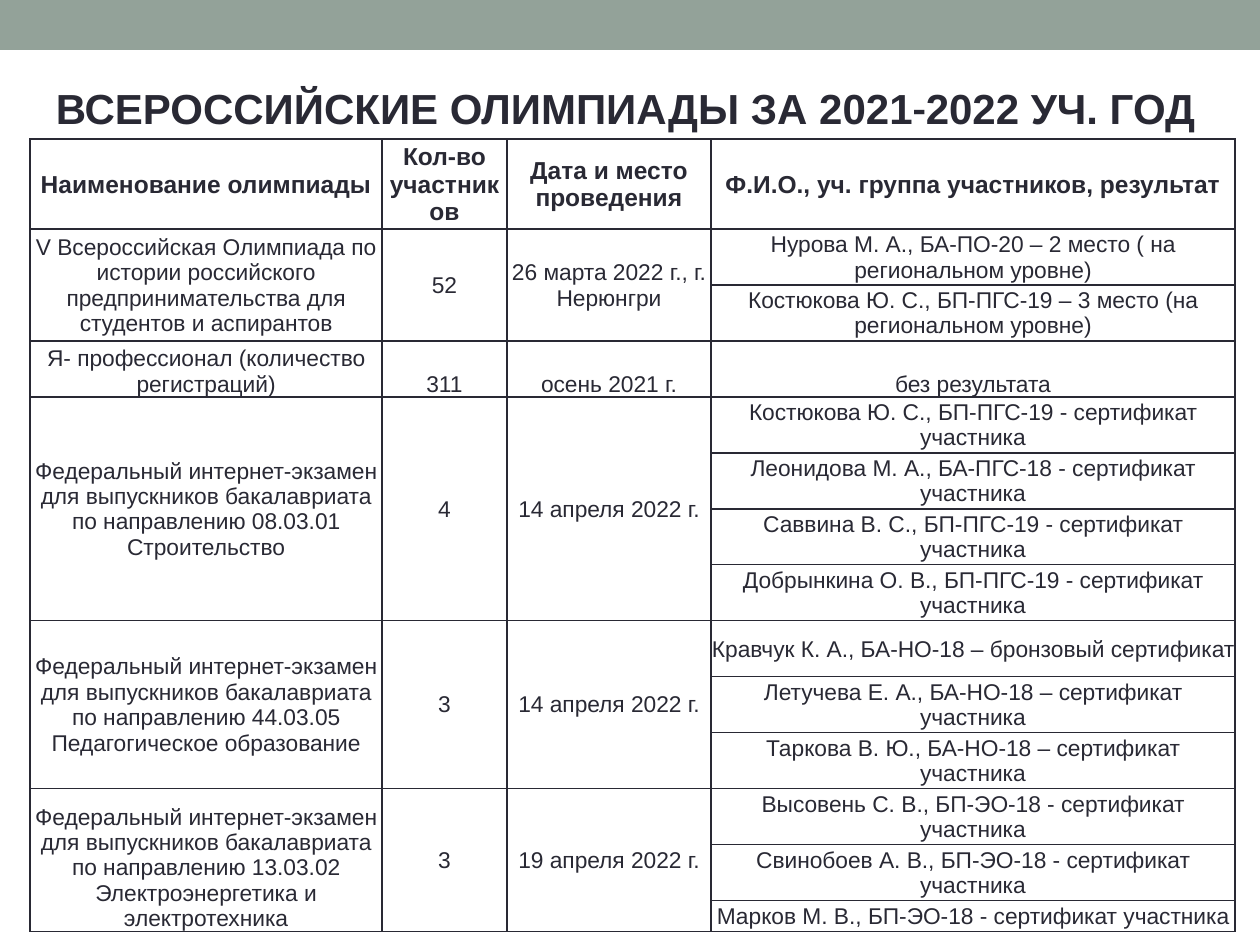
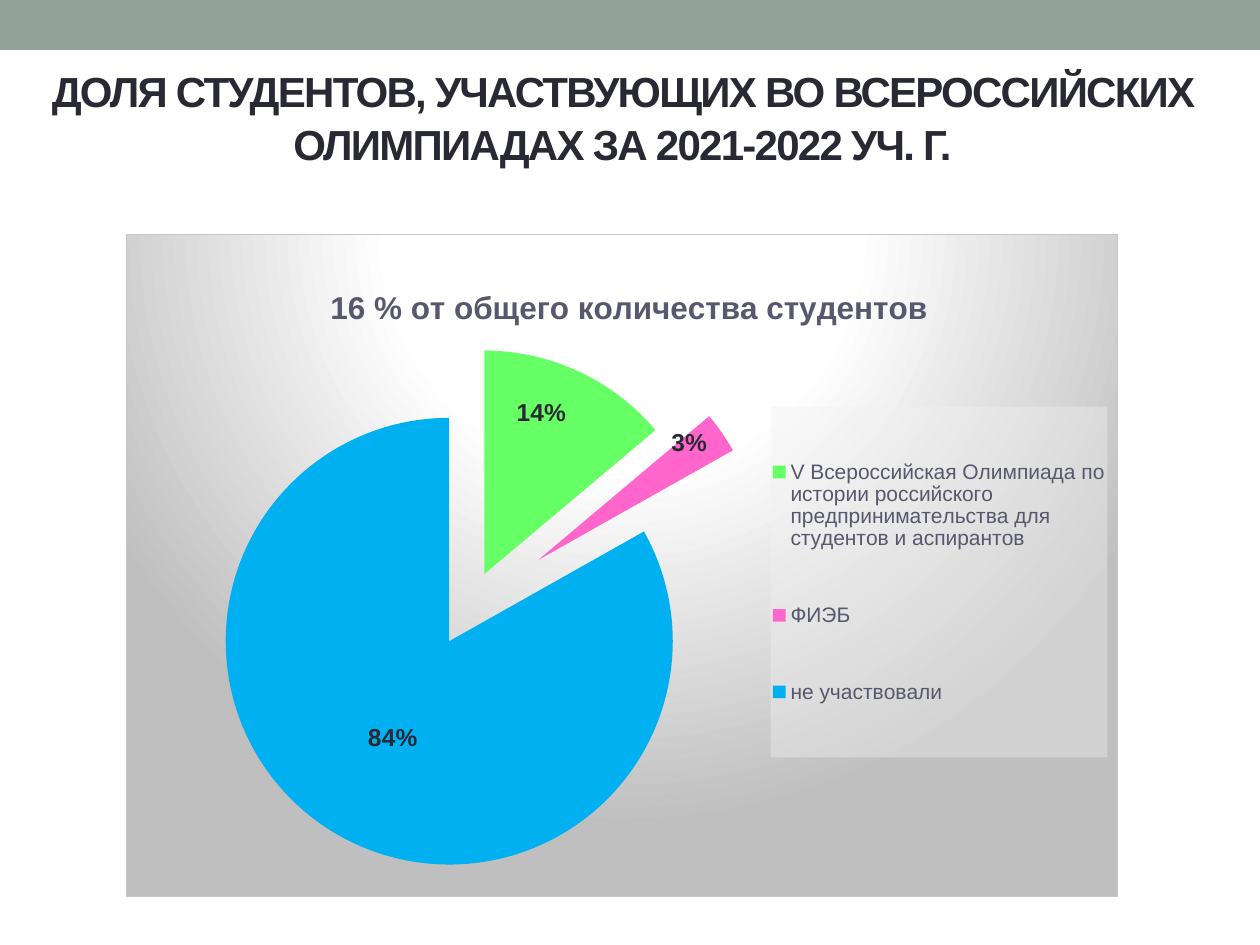
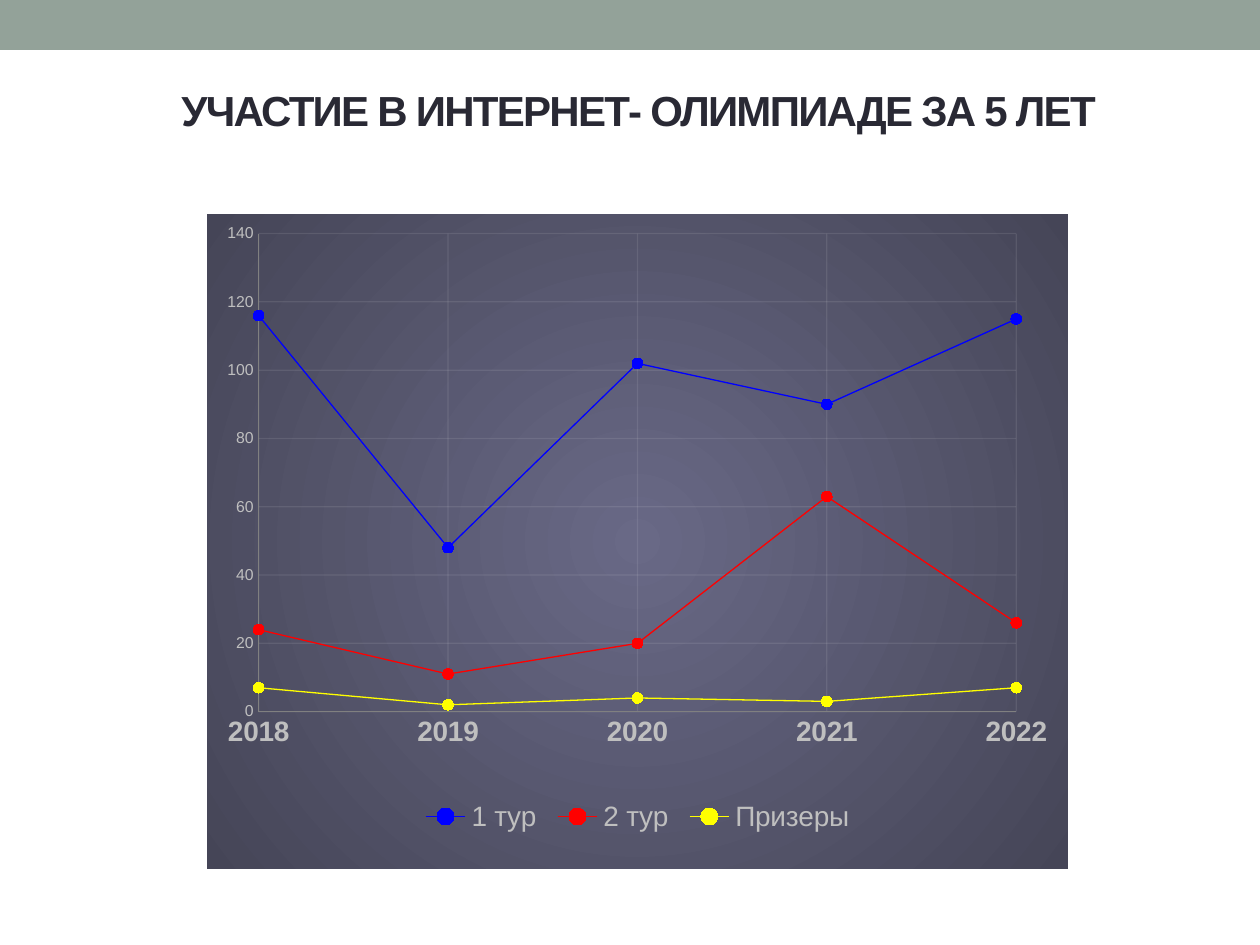
import dataclasses

import pptx
import pptx.chart.data
import pptx.dml.color
import pptx.enum.chart
import pptx.enum.shapes
import pptx.enum.text
import pptx.oxml
import pptx.oxml.ns
import pptx.util


@dataclasses.dataclass(frozen=True)
class Theme:
    font: str = "Arial"
    alt: str = "Calibri"
    ink: str = "292934"
    band: str = "93A299"
    paper: str = "FFFFFF"
    soft: str = "57576E"
    edge: str = "C5C5D1"
    pale: str = "BFBFBF"
    axis: str = "808080"
    grid: str = "F2F2F2"
    slices: tuple = ("66FF66", "FF66CC", "00B0F0")
    lines: tuple = ("0000FF", "FF0000", "FFFF00")
    glow: tuple = ((0, "FFFFFF"), (39, "FFFFFF"), (100, "BFBFBF"))
    dusk: tuple = ((0, "696986"), (100, "454557"))
    title: int = 24
    head: int = 14
    body: int = 13
    chart: int = 10


THEME = Theme()
WIDTH, HEIGHT = 1260, 945
Pt = pptx.util.Pt
ANCHOR = pptx.enum.text.MSO_ANCHOR
CENTER = pptx.enum.text.PP_ALIGN.CENTER
KIND = pptx.enum.chart.XL_CHART_TYPE
LEGEND = pptx.enum.chart.XL_LEGEND_POSITION

COLS = (352, 125, 204, 524)
ROWS = (90,) + (56,) * 12 + (31,)
HEADS = ("Наименование олимпиады", "Кол-во участников", "Дата и место проведения",
         "Ф.И.О., уч. группа участников, результат")
EXAM = "Федеральный интернет-экзамен для выпускников бакалавриата по направлению "
HISTORY = "V Всероссийская Олимпиада по истории российского предпринимательства для студентов и аспирантов"
EVENTS = (
    (HISTORY, "52", "26 марта 2022 г., г. Нерюнгри",
     ("Нурова М. А., БА-ПО-20 – 2 место ( на региональном уровне)",
      "Костюкова Ю. С., БП-ПГС-19 – 3 место (на региональном уровне)")),
    ("Я- профессионал (количество регистраций)", "311", "осень 2021 г.",
     ("без результата",)),
    (EXAM + "08.03.01 Строительство", "4", "14 апреля 2022 г.",
     ("Костюкова Ю. С., БП-ПГС-19 - сертификат участника",
      "Леонидова М. А., БА-ПГС-18 - сертификат участника",
      "Саввина В. С., БП-ПГС-19 - сертификат участника",
      "Добрынкина О. В., БП-ПГС-19 - сертификат участника")),
    (EXAM + "44.03.05 Педагогическое образование", "3", "14 апреля 2022 г.",
     ("Кравчук К. А., БА-НО-18 – бронзовый сертификат",
      "Летучева Е. А., БА-НО-18 – сертификат участника",
      "Таркова В. Ю., БА-НО-18 – сертификат участника")),
    (EXAM + "13.03.02 Электроэнергетика и электротехника", "3", "19 апреля 2022 г.",
     ("Высовень С. В., БП-ЭО-18 - сертификат участника",
      "Свинобоев А. В., БП-ЭО-18 - сертификат участника",
      "Марков М. В., БП-ЭО-18 - сертификат участника")),
)
SHARES = ((HISTORY, 14), ("ФИЭБ", 3), ("не участвовали", 84))
NUDGES = ((0.01, -0.09), (0.06, -0.08))
YEARS = range(2018, 2023)
ROUNDS = (("1 тур", (116, 48, 102, 90, 115)),
          ("2 тур", (24, 11, 20, 63, 26)),
          ("Призеры", (7, 2, 4, 3, 7)))


def px(count):
    return pptx.util.Emu(round(count * 914400 / 126))


def scale(box):
    return [px(side) for side in box]


def rgb(code):
    return pptx.dml.color.RGBColor.from_string(code)


def style(font, size, color, bold=False, face=THEME.font):
    font.name, font.size, font.bold = face, Pt(size), bold
    font.color.rgb = rgb(color)


def xml(text):
    tag = text[:text.index(">")].rstrip("/")
    spaces = " " + pptx.oxml.ns.nsdecls("a", "c")
    return pptx.oxml.parse_xml(tag + spaces + text[len(tag):])


def solid(color, alpha=100):
    return (f'<a:solidFill><a:srgbClr val="{color}"><a:alpha val="{alpha * 1000}"/>'
            '</a:srgbClr></a:solidFill>')


def radial(stops, rect):
    marks = "".join(f'<a:gs pos="{pos * 1000}"><a:srgbClr val="{color}"/></a:gs>'
                    for pos, color in stops)
    sides = " ".join(f'{side}="{value * 1000}"' for side, value in zip("ltrb", rect))
    return (f'<a:gradFill><a:gsLst>{marks}</a:gsLst><a:path path="circle">'
            f'<a:fillToRect {sides}/></a:path></a:gradFill>')


def layout(x, y, size=None, inner=False):
    target = '<c:layoutTarget val="inner"/>' if inner else ""
    modes = '<c:xMode val="edge"/><c:yMode val="edge"/>' if size or inner else ""
    parts = f'<c:x val="{x}"/><c:y val="{y}"/>'
    if size:
        parts += f'<c:w val="{size[0]}"/><c:h val="{size[1]}"/>'
    return xml(f"<c:layout><c:manualLayout>{target}{modes}{parts}</c:manualLayout></c:layout>")


def seat(chart, where, after, frame):
    part = chart.element.xpath(where)[0]
    for old in part.xpath("c:layout"):
        part.remove(old)
    if after:
        part.xpath(after)[0].addnext(frame)
    else:
        part.insert(0, frame)


def paint(chart, fill, line):
    chart.element.xpath("c:chart")[0].addnext(
        xml(f"<c:spPr>{fill}<a:ln w=\"9525\">{line}</a:ln></c:spPr>"))


def key(chart, where, size, color, frame):
    chart.has_legend = True
    chart.legend.position = where
    chart.legend.include_in_layout = False
    style(chart.legend.font, size, color)
    seat(chart, "c:chart/c:legend", "c:legendPos", frame)


def band(slide):
    bar = slide.shapes.add_shape(pptx.enum.shapes.MSO_SHAPE.RECTANGLE,
                                 *scale((0, 0, WIDTH, 50)))
    bar.shadow.inherit = False
    bar.fill.solid()
    bar.fill.fore_color.rgb = rgb(THEME.band)
    bar.line.fill.background()


def title(slide, box, parts, tight=True):
    frame = slide.shapes.add_textbox(*scale(box)).text_frame
    frame.word_wrap = True
    frame.vertical_anchor = ANCHOR.MIDDLE if tight else ANCHOR.TOP
    line = frame.paragraphs[0]
    line.alignment = CENTER
    for text in parts:
        run = line.add_run()
        run.text = text
        style(run.font, THEME.title, THEME.ink, True,
              THEME.alt if text == "-" else THEME.font)
        if tight:
            line.line_spacing = 1.05
            run.font._element.set("spc", "-100")


def border(cell):
    props = cell._tc.get_or_add_tcPr()
    for spot, side in enumerate("LRTB"):
        props.insert(spot, xml(f'<a:ln{side} w="12700">{solid(THEME.ink)}</a:ln{side}>'))


def write(cell, text, head=False, anchor=ANCHOR.MIDDLE):
    cell.text_frame.text = text
    cell.vertical_anchor = anchor
    line = cell.text_frame.paragraphs[0]
    line.alignment = CENTER
    for run in line.runs:
        style(run.font, THEME.head if head else THEME.body, THEME.ink, head)


def results(slide, box):
    grid = slide.shapes.add_table(len(ROWS), len(COLS), *scale(box)).table
    grid.first_row = grid.horz_banding = False
    for col, width in zip(grid.columns, COLS):
        col.width = px(width)
    for row, height in zip(grid.rows, ROWS):
        row.height = px(height)
    for cell in grid.iter_cells():
        cell.margin_left = cell.margin_right = cell.margin_top = px(1)
        cell.margin_bottom = 0
        cell.fill.solid()
        cell.fill.fore_color.rgb = rgb(THEME.paper)
        border(cell)
    for col, text in enumerate(HEADS):
        write(grid.cell(0, col), text, True)
    top = 1
    for *facts, people in EVENTS:
        last = top + len(people) - 1
        anchor = ANCHOR.BOTTOM if len(people) == 1 else ANCHOR.MIDDLE
        for col, text in enumerate(facts):
            if last > top:
                grid.cell(top, col).merge(grid.cell(last, col))
            write(grid.cell(top, col), text, anchor=anchor)
        for row, text in enumerate(people, top):
            write(grid.cell(row, 3), text, anchor=anchor)
        top = last + 1
    grid.cell(top - len(people), 0).vertical_anchor = ANCHOR.BOTTOM


def pie(slide, box):
    data = pptx.chart.data.CategoryChartData()
    data.categories = [name for name, share in SHARES]
    data.add_series("Series 1", [share for name, share in SHARES])
    chart = slide.shapes.add_chart(KIND.PIE, *scale(box), data).chart
    style(chart.font, THEME.chart, THEME.ink)
    paint(chart, radial(THEME.glow, (50, -80, 50, 180)), solid(THEME.edge))
    chart.has_title = True
    chart.chart_title.text_frame.text = "16 % от общего количества студентов"
    style(chart.chart_title.text_frame.paragraphs[0].runs[0].font, 18, THEME.soft, True)
    seat(chart, "c:chart/c:title", "c:tx", layout(0.2, 0.07, inner=True))
    seat(chart, "c:chart/c:plotArea", None, layout(0.05, 0.17, (0.59, 0.79), True))
    key(chart, LEGEND.RIGHT, 12, THEME.soft, layout(0.65, 0.26, (0.34, 0.53)))
    chart.element.xpath("c:chart/c:legend/c:overlay")[0].addnext(
        xml(f"<c:spPr>{solid(THEME.grid, 39)}</c:spPr>"))

    plot = chart.plots[0]
    plot.vary_by_categories = True
    series = plot.series[0]
    for spot, color in enumerate(THEME.slices):
        fill = series.points[spot].format.fill
        fill.solid()
        fill.fore_color.rgb = rgb(color)
    node = chart.element.xpath(".//c:ser")[0]
    node.xpath("c:dPt")[0].addprevious(xml('<c:explosion val="17"/>'))
    node.xpath("c:dPt[2]/c:spPr")[0].addprevious(xml('<c:explosion val="38"/>'))

    form = '0"%"'
    labels = series.data_labels
    labels.show_value = True
    labels.show_percentage = False
    labels.number_format, labels.number_format_is_linked = form, False
    labels.position = pptx.enum.chart.XL_LABEL_POSITION.CENTER
    style(labels.font, THEME.head, THEME.ink, True)
    for spot, nudge in enumerate(NUDGES):
        label = series.points[spot].data_label
        style(label.font, THEME.head, THEME.ink, True)
        label.position = labels.position
        mark = node.xpath(f"c:dLbls/c:dLbl[{spot + 1}]/c:idx")[0]
        mark.addnext(xml("<c:numFmt formatCode='0\"%\"' sourceLinked='0'/>"))
        mark.addnext(layout(*nudge))


def trend(slide, box):
    data = pptx.chart.data.XyChartData()
    for name, counts in ROUNDS:
        series = data.add_series(name)
        for year, count in zip(YEARS, counts):
            series.add_data_point(year, count)
    chart = slide.shapes.add_chart(KIND.XY_SCATTER_SMOOTH, *scale(box), data).chart
    style(chart.font, THEME.chart, THEME.ink)
    chart.has_title = False
    paint(chart, radial(THEME.dusk, (50,) * 4), "<a:noFill/>")
    seat(chart, "c:chart/c:plotArea", None, layout(0.06, 0.03, (0.88, 0.73), True))
    key(chart, LEGEND.BOTTOM, 16, THEME.pale, layout(0.24, 0.88, (0.52, 0.08)))
    for axis, size, bold in ((chart.category_axis, 16, True), (chart.value_axis, 9, False)):
        style(axis.tick_labels.font, size, THEME.pale, bold)
        axis.major_tick_mark = axis.minor_tick_mark = pptx.enum.chart.XL_TICK_MARK.NONE
        axis.has_major_gridlines = True
        for line, color in ((axis.format.line, THEME.axis),
                            (axis.major_gridlines.format.line, THEME.grid)):
            line.width = Pt(0.75)
            line.color.rgb = rgb(color)
    for color in chart.element.xpath(".//c:majorGridlines//a:srgbClr"):
        color.append(xml('<a:alpha val="10000"/>'))
    years = chart.category_axis
    years.minimum_scale, years.maximum_scale, years.major_unit = YEARS[0], YEARS[-1], 1
    chart.value_axis.minimum_scale, chart.value_axis.maximum_scale = 0, 140
    chart.value_axis.major_unit = 20
    for series, color in zip(chart.plots[0].series, THEME.lines):
        series.format.line.width = Pt(0.75)
        series.format.line.color.rgb = rgb(color)
        marker = series.marker
        marker.style = pptx.enum.chart.XL_MARKER_STYLE.CIRCLE
        marker.size = 6
        marker.format.fill.solid()
        marker.format.fill.fore_color.rgb = rgb(color)
        marker.format.line.color.rgb = rgb(color)


def main():
    deck = pptx.Presentation()
    deck.slide_width, deck.slide_height = px(WIDTH), px(HEIGHT)
    slides = [deck.slides.add_slide(deck.slide_layouts[6]) for _ in range(3)]
    for slide in slides:
        band(slide)
    first, second, third = slides
    title(first, (30, 76, 1191, 63),
          ("ВСЕРОССИЙСКИЕ ОЛИМПИАДЫ ЗА 2021", "-", "2022 УЧ. ГОД"), False)
    results(first, (30, 139, sum(COLS), sum(ROWS)))
    title(second, (0, 66, 1245, 100),
          ("ДОЛЯ СТУДЕНТОВ, УЧАСТВУЮЩИХ ВО ВСЕРОССИЙСКИХ ОЛИМПИАДАХ ЗА 2021-2022 УЧ. Г.",))
    pie(second, (126, 234, 992, 663))
    title(third, (115, 66, 1047, 86), ("УЧАСТИЕ В ИНТЕРНЕТ- ОЛИМПИАДЕ ЗА 5 ЛЕТ",))
    trend(third, (207, 214, 861, 655))
    deck.save("out.pptx")


if __name__ == "__main__":
    main()
